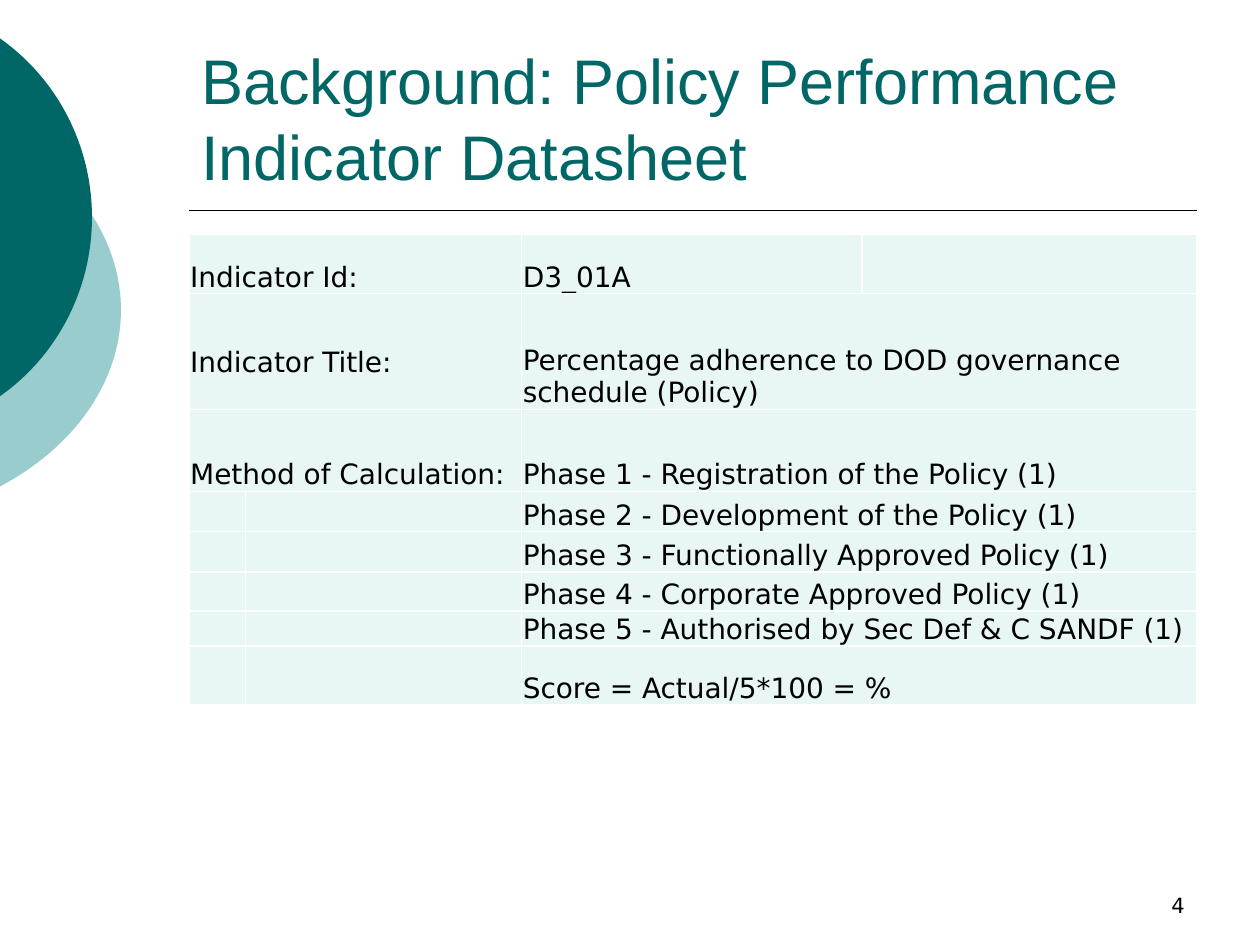
from lxml import etree
from pptx import Presentation
from pptx.dml.color import RGBColor
from pptx.enum.shapes import MSO_CONNECTOR, MSO_SHAPE
from pptx.enum.text import MSO_ANCHOR, PP_ALIGN
from pptx.oxml.ns import qn
from pptx.util import Inches, Pt

OVAL, STRAIGHT = MSO_SHAPE.OVAL, MSO_CONNECTOR.STRAIGHT
BOTTOM, RIGHT = MSO_ANCHOR.BOTTOM, PP_ALIGN.RIGHT
TEAL = RGBColor(0x00, 0x66, 0x66)
LIGHT_TEAL = RGBColor(0x99, 0xCC, 0xCC)
PALE = RGBColor(0xE8, 0xF6, 0xF6)
WHITE = RGBColor(0xFF, 0xFF, 0xFF)
BLACK = RGBColor(0x00, 0x00, 0x00)


def add_run(p, text, size, font, color):
    r = p.add_run()
    r.text = text
    r.font.size = Pt(size)
    r.font.name = font
    r.font.color.rgb = color


def add_borders(cell):
    tcPr = cell._tc.get_or_add_tcPr()
    for i, side in enumerate(("lnL", "lnR", "lnT", "lnB")):
        ln = etree.Element(qn(f"a:{side}"), w=str(Pt(1)))
        fill = etree.SubElement(ln, qn("a:solidFill"))
        etree.SubElement(fill, qn("a:srgbClr"), val=str(WHITE))
        tcPr.insert(i, ln)


prs = Presentation()
prs.slide_width, prs.slide_height = Inches(10), Inches(7.5)
s = prs.slides.add_slide(prs.slide_layouts[6])

# Ellipses reaching in from the left slide edge
for box, color in [((-3.54, 0.75, 4.5, 3.42), LIGHT_TEAL),
                   ((-2.65, 0, 3.38, 3.45), TEAL)]:
    sp = s.shapes.add_shape(OVAL, *map(Inches, box))
    sp.shadow.inherit = False
    sp.fill.solid()
    sp.fill.fore_color.rgb = color
    sp.line.fill.background()

# Rule under the title
rule = s.shapes.add_connector(STRAIGHT, Inches(1.5), Inches(1.67),
                              Inches(9.5), Inches(1.67))
rule.line.color.rgb = BLACK
rule.line.width = Pt(1)
etree.SubElement(rule._element.spPr, qn("a:effectLst"))

# Title and slide number
for box, text, size, font, color, align in [
        ((1.5, 0.33, 8, 1.25), "Background: Policy Performance Indicator Datasheet",
         36, "Arial", TEAL, None),
        ((7.17, 6.83, 2.33, 0.5), "4", 12, "DejaVu Sans", BLACK, RIGHT)]:
    tf = s.shapes.add_textbox(*map(Inches, box)).text_frame
    tf.word_wrap = True
    tf.vertical_anchor = BOTTOM
    p = tf.paragraphs[0]
    p.alignment = align
    add_run(p, text, size, font, color)

# Datasheet table: row height, label, value
rows = [
    (0.47, "Indicator Id:", "D3_01A"),
    (0.92, "Indicator Title:", "Percentage adherence to DOD governance schedule (Policy)"),
    (0.65, "Method of Calculation:", "Phase 1 - Registration of the Policy (1)"),
    (0.32, "", "Phase 2 - Development of the Policy (1)"),
    (0.32, "", "Phase 3 - Functionally Approved Policy (1)"),
    (0.31, "", "Phase 4 - Corporate Approved Policy (1)"),
    (0.27, "", "Phase 5 - Authorised by Sec Def & C SANDF (1)"),
    (0.47, "", "Score = Actual/5*100 = %"),
]
widths = [0.45, 2.19, 2.7, 2.66]
table = s.shapes.add_table(len(rows), len(widths), Inches(1.5), Inches(1.86),
                           Inches(8), Inches(sum(row[0] for row in rows))).table
table.first_row = table.horz_banding = False
for column, width in zip(table.columns, widths):
    column.width = Inches(width)

for i, (height, label, value) in enumerate(rows):
    table.rows[i].height = Inches(height)
    for j, text in enumerate((label, "", value, "")):
        cell = table.cell(i, j)
        cell.fill.solid()
        cell.fill.fore_color.rgb = PALE
        cell.vertical_anchor = BOTTOM
        cell.margin_left = cell.margin_right = cell.margin_top = Inches(0.01)
        cell.margin_bottom = 0
        add_borders(cell)
        p = cell.text_frame.paragraphs[0]
        if text:
            add_run(p, text, 16, "DejaVu Sans", BLACK)
        else:
            # Small empty cells keep the row heights
            p._p.get_or_add_endParaRPr().set("sz", "1000")
    if label:
        table.cell(i, 0).merge(table.cell(i, 1))
    if i > 0:
        table.cell(i, 2).merge(table.cell(i, 3))

# The title label sits above the bottom of its row
table.cell(1, 0).margin_bottom = Inches(0.24)

prs.save("out.pptx")
